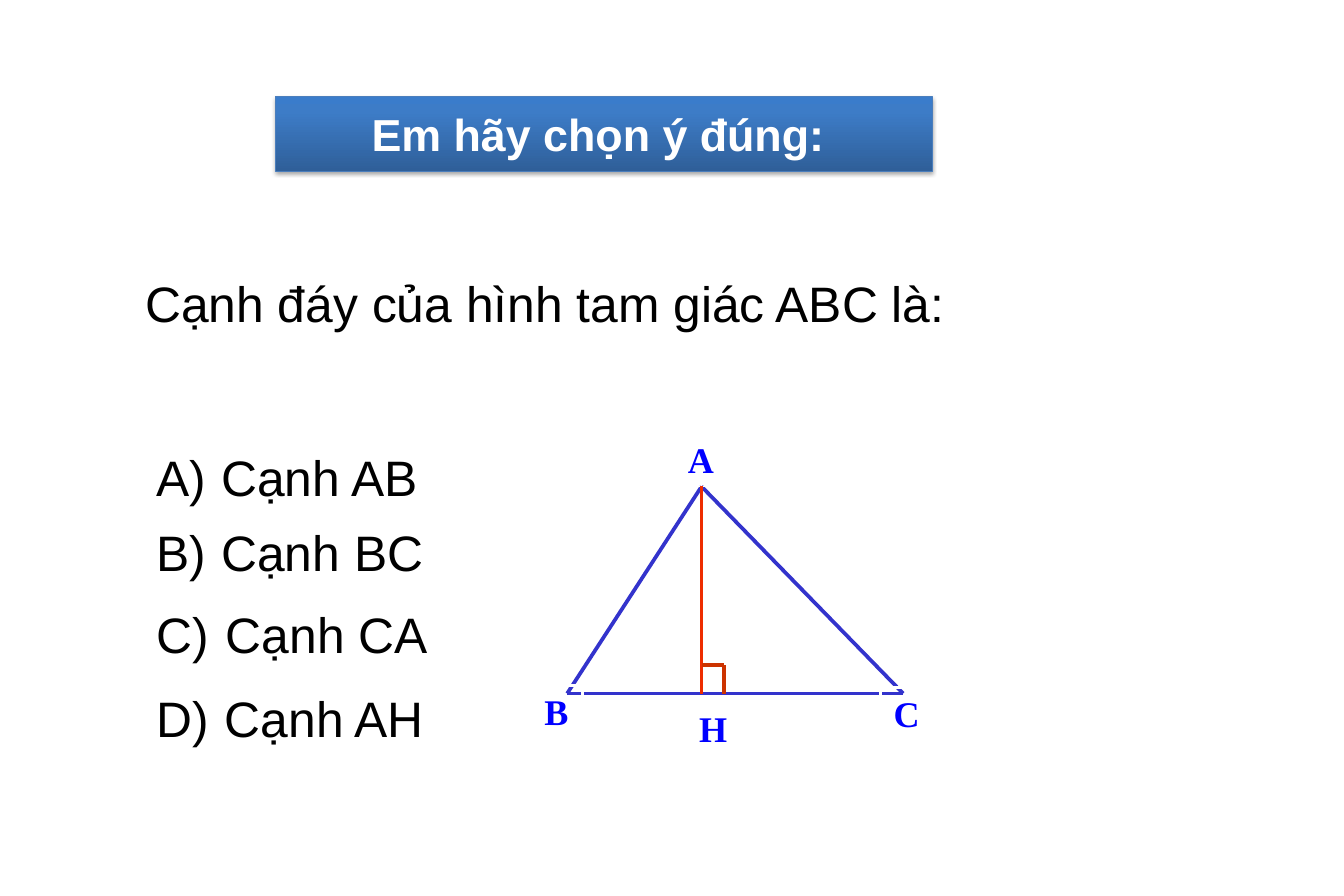
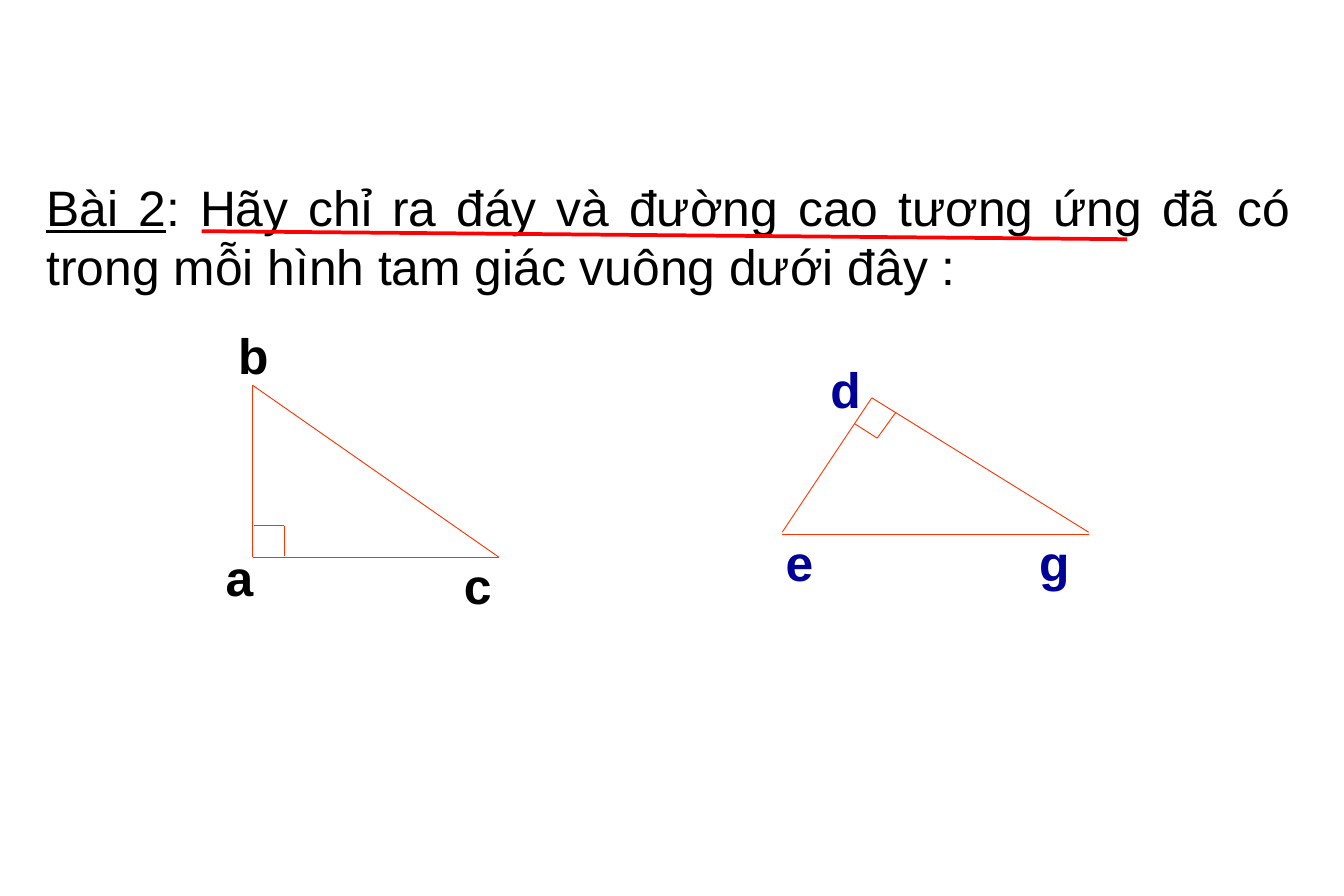
"""Builds two geometry quiz slides about the base and height of a triangle."""
from copy import deepcopy

from lxml import etree
from pptx import Presentation
from pptx.dml.color import RGBColor
from pptx.enum.shapes import MSO_CONNECTOR, MSO_SHAPE
from pptx.enum.text import MSO_ANCHOR, PP_ALIGN
from pptx.oxml import parse_xml
from pptx.oxml.ns import nsdecls, qn
from pptx.util import Pt

PX = 9144
LINE, RECT = MSO_CONNECTOR.STRAIGHT, MSO_SHAPE.RECTANGLE
TOP, MID = MSO_ANCHOR.TOP, MSO_ANCHOR.MIDDLE
LEFT, CENTER, JUST = PP_ALIGN.LEFT, PP_ALIGN.CENTER, PP_ALIGN.JUSTIFY

BLACK = RGBColor(0x00, 0x00, 0x00)
WHITE = RGBColor(0xFF, 0xFF, 0xFF)
BLUE = RGBColor(0x00, 0x00, 0xFF)
NAVY = RGBColor(0x00, 0x00, 0x99)
INDIGO = RGBColor(0x33, 0x33, 0xCC)
RED = RGBColor(0xFF, 0x00, 0x00)
SCARLET = RGBColor(0xEE, 0x2D, 0x00)
RUST = RGBColor(0xCC, 0x33, 0x00)
ORANGE = RGBColor(0xFF, 0x33, 0x00)
EDGE = RGBColor(0x4B, 0x7E, 0xBC)
SHADES = [(0, RGBColor(0x2F, 0x5F, 0x99)), (0.8, RGBColor(0x3D, 0x7C, 0xC7)),
          (1, RGBColor(0x3A, 0x7C, 0xCB))]

BODY = {"name": "Arial", "size": Pt(40), "bold": False}
BOLD = {**BODY, "bold": True}
HEAD = {**BOLD, "size": Pt(36)}
MARK = {"name": "Times New Roman", "size": Pt(29), "bold": True}


def draw(slide, color, width, *points):
    """Joins the points with straight lines."""
    for (x1, y1), (x2, y2) in zip(points, points[1:]):
        line = slide.shapes.add_connector(LINE, x1 * PX, y1 * PX, x2 * PX, y2 * PX)
        line.line.color.rgb = color
        line.line.width = Pt(width)
        etree.SubElement(line._element.spPr, qn("a:effectLst"))


def write(slide, box, words, font, color, align=LEFT, anchor=TOP, inset=(10, 5), kind=None):
    """Adds a text box, or a preset shape, with the given words."""
    area = [n * PX for n in box]
    shape = slide.shapes.add_shape(kind, *area) if kind else slide.shapes.add_textbox(*area)
    frame = shape.text_frame
    side, edge = (n * PX for n in inset)
    form = {"word_wrap": True, "vertical_anchor": anchor, "margin_left": side,
            "margin_right": side, "margin_top": edge, "margin_bottom": edge}
    for key, value in form.items():
        setattr(frame, key, value)
    para = frame.paragraphs[0]
    para.alignment = align
    para.line_spacing = Pt(font["size"].pt * 1.2)
    for part in [words] if isinstance(words, str) else words:
        run = para.add_run()
        run.text = part
        run.font.color.rgb = color
        for key, value in font.items():
            setattr(run.font, key, value)
    return shape


deck = Presentation()
deck.slide_width, deck.slide_height = 1500 * PX, 1000 * PX
blank = deck.slide_layouts[6]

quiz = deck.slides.add_slide(blank)
top, left, right = (783, 543), (633, 774), (1008, 774)
draw(quiz, INDIGO, 3, top, left, right, top)
for name, x, y, align, width in [("A", 758, 483, LEFT, 0.75), ("B", 592, 765, CENTER, 2.25),
                                 ("C", 983, 767, CENTER, 2.25)]:
    tag = write(quiz, (x, y, 58, 60), name, MARK, BLUE, align)
    tag.line.color.rgb = WHITE
    tag.line.width = Pt(width)
draw(quiz, SCARLET, 3, (783, 542), (783, 775))
draw(quiz, RUST, 3, (808, 775), (808, 742), (783, 742))
write(quiz, (767, 783, 58, 59), "H", MARK, BLUE, CENTER)

write(quiz, (-67, 292, 1350, 92), "Cạnh đáy của hình tam giác ABC là:",
      BODY, BLACK, CENTER, MID, (0, 0))
for mark, side, x, y, high in [("A)", "AB", 247, 490, 83), ("B)", "BC", 247, 582, 67),
                               ("C)", "CA", 252, 674, 67), ("D)", "AH", 251, 767, 67)]:
    write(quiz, (175, y, 72, high), mark, BODY, BLACK, LEFT, MID, (0, 0))
    write(quiz, (x, y, 805, high), "Cạnh " + side, BODY, BLACK, LEFT, MID, (0, 0))

band = write(quiz, (308, 108, 733, 83), "Em hãy chọn ý đúng: ", HEAD, WHITE, CENTER, MID, kind=RECT)
band.line.color.rgb = EDGE
band.line.width = Pt(0.75)
band.fill.gradient()
band.fill.gradient_angle = 90
stops = band._element.spPr.find(qn("a:gradFill")).find(qn("a:gsLst"))
stops.append(deepcopy(stops[0]))
for stop, (place, color) in zip(band.fill.gradient_stops, SHADES):
    stop.position = place
    stop.color.rgb = color
band._element.spPr.append(parse_xml(
    f'<a:effectLst {nsdecls("a")}><a:outerShdw blurRad="39370" dist="22860" dir="5400000" '
    'rotWithShape="0"><a:srgbClr val="000000"><a:alpha val="35000"/></a:srgbClr>'
    '</a:outerShdw></a:effectLst>'))

task = deck.slides.add_slide(blank)
text = write(task, (42, 192, 1408, 145),
             ["Bài 2", ": Hãy chỉ ra đáy và đường cao tương ứng đã có trong mỗi hình "
              "tam giác vuông dưới đây :"], BODY, BLACK, JUST)
text.text_frame.paragraphs[0].runs[0].font.underline = True

for path in [[(282, 430), (282, 622), (557, 622), (282, 430)],
             [(284, 587), (317, 587), (317, 621)],
             [(873, 594), (973, 444), (1215, 594)], [(1215, 596), (873, 596)],
             [(1000, 460), (979, 489), (954, 473)]]:
    draw(task, ORANGE, 0.75, *path)
for name, x, y, color in [("a", 242, 605, BLACK), ("b", 256, 358, BLACK), ("c", 508, 614, BLACK),
                          ("e", 867, 589, NAVY), ("d", 917, 395, NAVY), ("g", 1150, 589, NAVY)]:
    write(task, (x, y, 83, 77), name, BOLD, color)
draw(task, RED, 3, (225, 258), (1258, 267))

deck.save("out.pptx")
